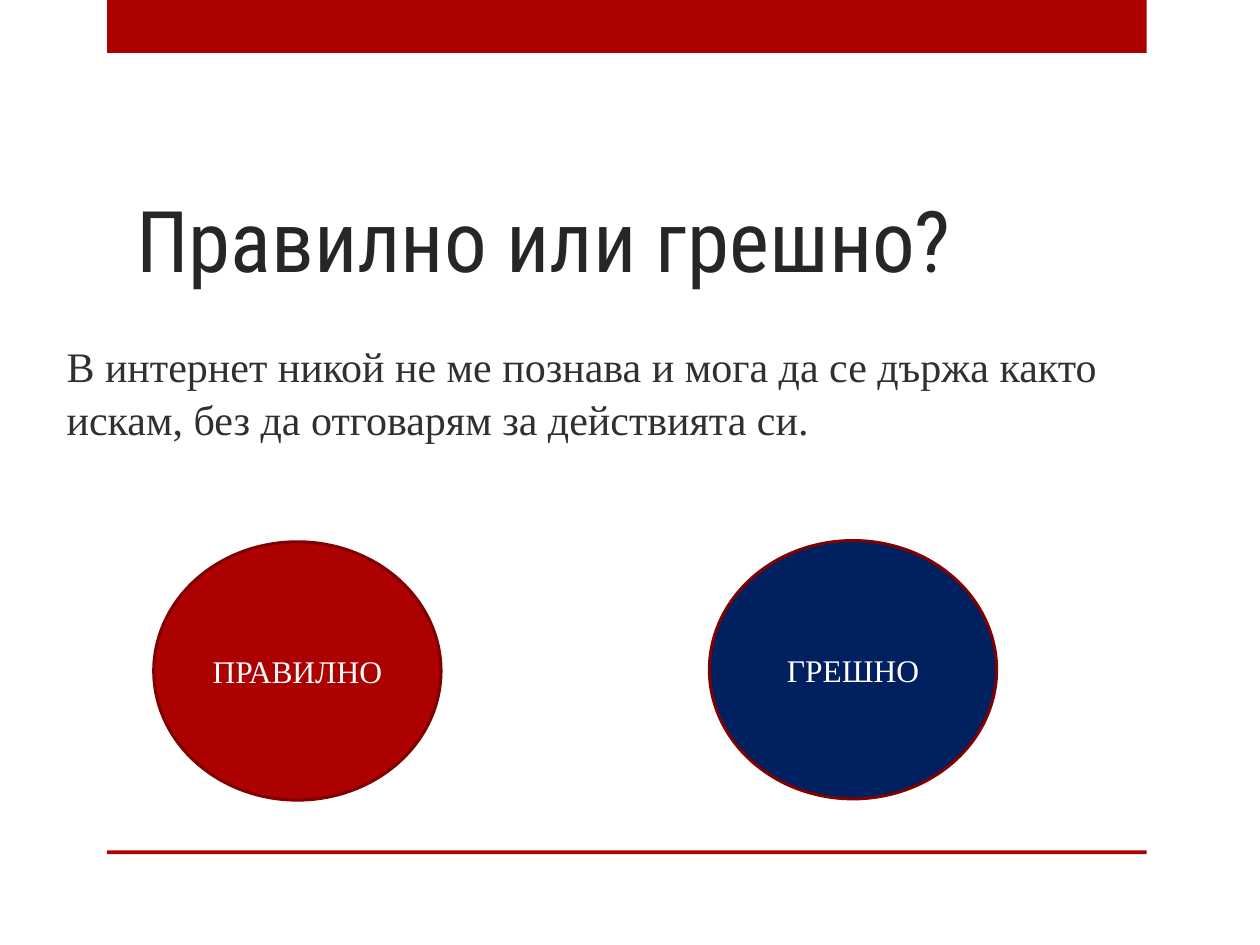
from pptx import Presentation
from pptx.dml.color import RGBColor
from pptx.enum.shapes import MSO_SHAPE
from pptx.enum.text import MSO_ANCHOR, MSO_AUTO_SIZE, PP_ALIGN
from pptx.util import Inches, Pt

RECTANGLE, OVAL = MSO_SHAPE.RECTANGLE, MSO_SHAPE.OVAL
MIDDLE, BOTTOM = MSO_ANCHOR.MIDDLE, MSO_ANCHOR.BOTTOM
LEFT, CENTER = PP_ALIGN.LEFT, PP_ALIGN.CENTER
NO_AUTOFIT = MSO_AUTO_SIZE.NONE
TITLE_ONLY = 5

RED, DARK_RED, NAVY, WHITE = "AD0101", "800101", "002060", "FFFFFF"
TITLE_FONT, BODY_FONT = "Roboto Condensed", "Times New Roman"


def color(value):
    return RGBColor.from_string(value)


def write_text(shape, text, font, size, text_color, anchor, alignment):
    frame = shape.text_frame
    frame.word_wrap = True
    frame.auto_size = NO_AUTOFIT
    frame.vertical_anchor = anchor
    paragraph = frame.paragraphs[0]
    paragraph.alignment = alignment
    run = paragraph.add_run()
    run.text = text
    run.font.name = font
    run.font.size = Pt(size)
    run.font.color.rgb = color(text_color)
    return paragraph


def add_filled_shape(slide, kind, left, top, width, height, fill):
    shape = slide.shapes.add_shape(
        kind, Inches(left), Inches(top), Inches(width), Inches(height))
    shape.shadow.inherit = False
    shape.fill.solid()
    shape.fill.fore_color.rgb = color(fill)
    shape.line.fill.background()
    return shape


def add_bar(slide, top, height):
    add_filled_shape(slide, RECTANGLE, 0.85, top, 8.25, height, RED)


def add_title(slide, text):
    title = slide.shapes.title
    title.left, title.top = Inches(0.98), Inches(0.6)
    title.width, title.height = Inches(7.42), Inches(1.75)
    write_text(title, text, TITLE_FONT, 48.6, "262626", BOTTOM, LEFT)


def add_statement(slide, text):
    box = slide.shapes.add_textbox(
        Inches(0.43), Inches(2.18), Inches(9), Inches(1.84))
    paragraph = write_text(box, text, BODY_FONT, 24, "303030", MIDDLE, LEFT)
    paragraph.space_before = Pt(4.8)
    paragraph.line_spacing = 1.05


def add_answer(slide, text, left, top, fill):
    oval = add_filled_shape(slide, OVAL, left, top, 2.28, 2.05, fill)
    oval.line.color.rgb = color(DARK_RED)
    oval.line.width = Pt(1.75)
    write_text(oval, text, BODY_FONT, 18, WHITE, MIDDLE, CENTER)


def main():
    presentation = Presentation()
    presentation.slide_width = Inches(10)
    presentation.slide_height = Inches(7.5)
    slide = presentation.slides.add_slide(
        presentation.slide_layouts[TITLE_ONLY])

    add_bar(slide, 0, 0.42)
    add_bar(slide, 6.75, 0.03)
    add_title(slide, "Правилно или грешно?")
    add_statement(slide, "В интернет никой не ме познава и мога да се държа "
                         "както искам, без да отговарям за действията си.")
    add_answer(slide, "ПРАВИЛНО", 1.22, 4.3, RED)
    add_answer(slide, "ГРЕШНО", 5.63, 4.29, NAVY)

    presentation.save("out.pptx")


if __name__ == "__main__":
    main()
